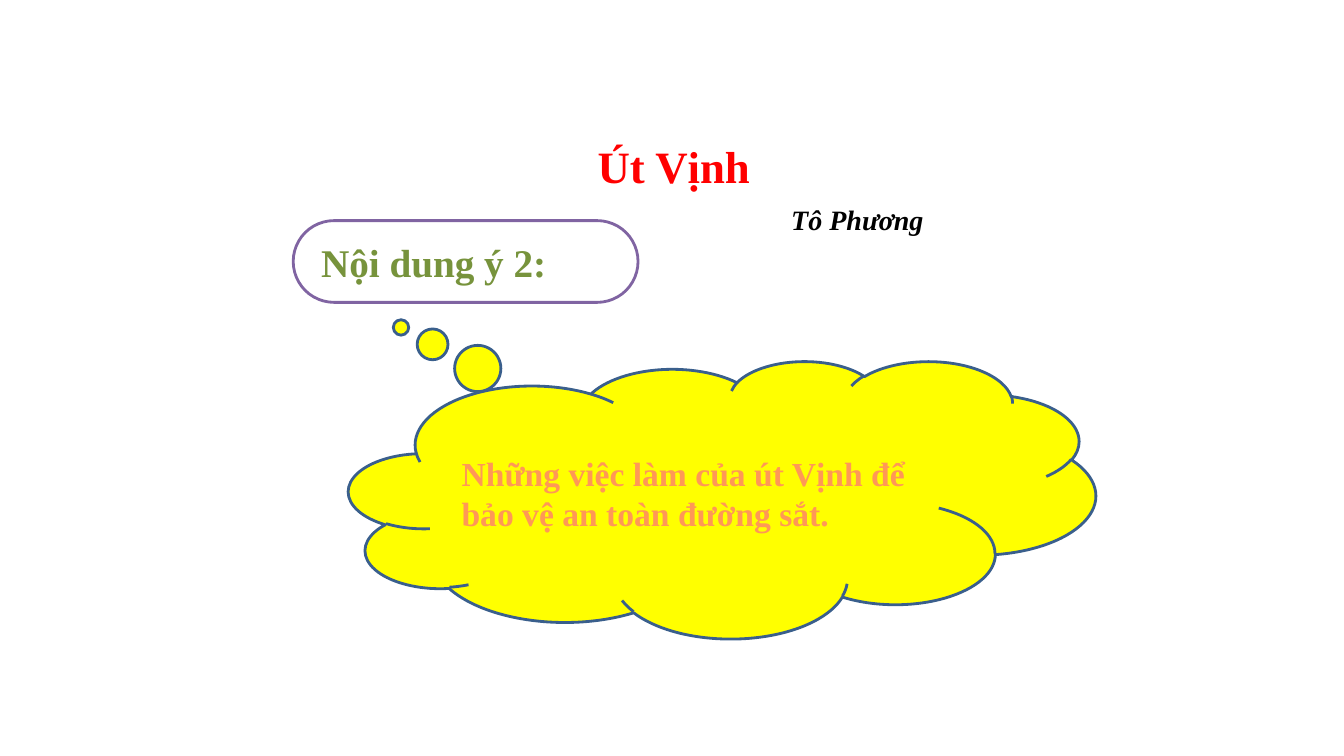
from pptx import Presentation
from pptx.dml.color import RGBColor
from pptx.enum.shapes import MSO_SHAPE
from pptx.enum.text import MSO_ANCHOR, PP_ALIGN
from pptx.util import Cm, Pt

ROUND = MSO_SHAPE.ROUNDED_RECTANGLE
CLOUD = MSO_SHAPE.CLOUD_CALLOUT
TOP = MSO_ANCHOR.TOP
MIDDLE = MSO_ANCHOR.MIDDLE
LEFT = PP_ALIGN.LEFT

COLORS = {
    "red": "FF0000",
    "black": "000000",
    "white": "FFFFFF",
    "violet": "8064A2",
    "green": "77933C",
    "yellow": "FFFF00",
    "blue": "3A5F8C",
    "orange": "FF9856",
}


def color(name):
    return RGBColor.from_string(COLORS[name])


def write(frame, text, size, ink, italic=False, before=0, anchor=TOP,
          inset=0.25, font="Times New Roman"):
    frame.word_wrap = True
    frame.vertical_anchor = anchor
    frame.margin_left = Cm(inset)
    para = frame.paragraphs[0]
    para.alignment = LEFT
    para.space_before = Pt(before)
    run = para.add_run()
    run.text = text
    run.font.name = font
    run.font.size = Pt(size)
    run.font.bold = True
    run.font.italic = italic
    run.font.color.rgb = color(ink)


class Page:
    def __init__(self, deck, stroke=2):
        self.slide = deck.slides.add_slide(deck.slide_layouts[5])
        self.stroke = Pt(stroke)

    def title(self, text, box, **style):
        shape = self.slide.shapes.title
        shape.left, shape.top, shape.width, shape.height = map(Cm, box)
        write(shape.text_frame, text, **style)

    def label(self, text, box, **style):
        shape = self.slide.shapes.add_textbox(*map(Cm, box))
        write(shape.text_frame, text, **style)

    def bubble(self, kind, text, box, fill, line, adjust, **style):
        shape = self.slide.shapes.add_shape(kind, *map(Cm, box))
        shape.shadow.inherit = False
        for index, value in enumerate(adjust):
            shape.adjustments[index] = value
        shape.fill.solid()
        shape.fill.fore_color.rgb = color(fill)
        shape.line.color.rgb = color(line)
        shape.line.width = self.stroke
        write(shape.text_frame, text, anchor=MIDDLE, **style)


def main():
    deck = Presentation()
    deck.slide_width = Cm(33.87)
    deck.slide_height = Cm(19.05)
    page = Page(deck)
    page.title("Út Vịnh", (14.81, 3.38, 4.88, 1.6),
               size=32, ink="red", before=4)
    page.label("Tô Phương", (19.69, 4.98, 4.45, 1.09),
               size=20, ink="black", italic=True, before=2)
    page.bubble(ROUND, "Nội dung ý 2:", (7.39, 5.56, 8.69, 2.06),
                "white", "violet", [0.5], size=28, ink="green", inset=0.4)
    page.bubble(CLOUD, "Những việc làm của út Vịnh để bảo vệ an toàn đường sắt.",
                (8.79, 9.09, 18.82, 6.99), "yellow", "blue",
                [-0.43, -0.62], size=24, ink="orange")
    deck.save("out.pptx")


if __name__ == "__main__":
    main()
